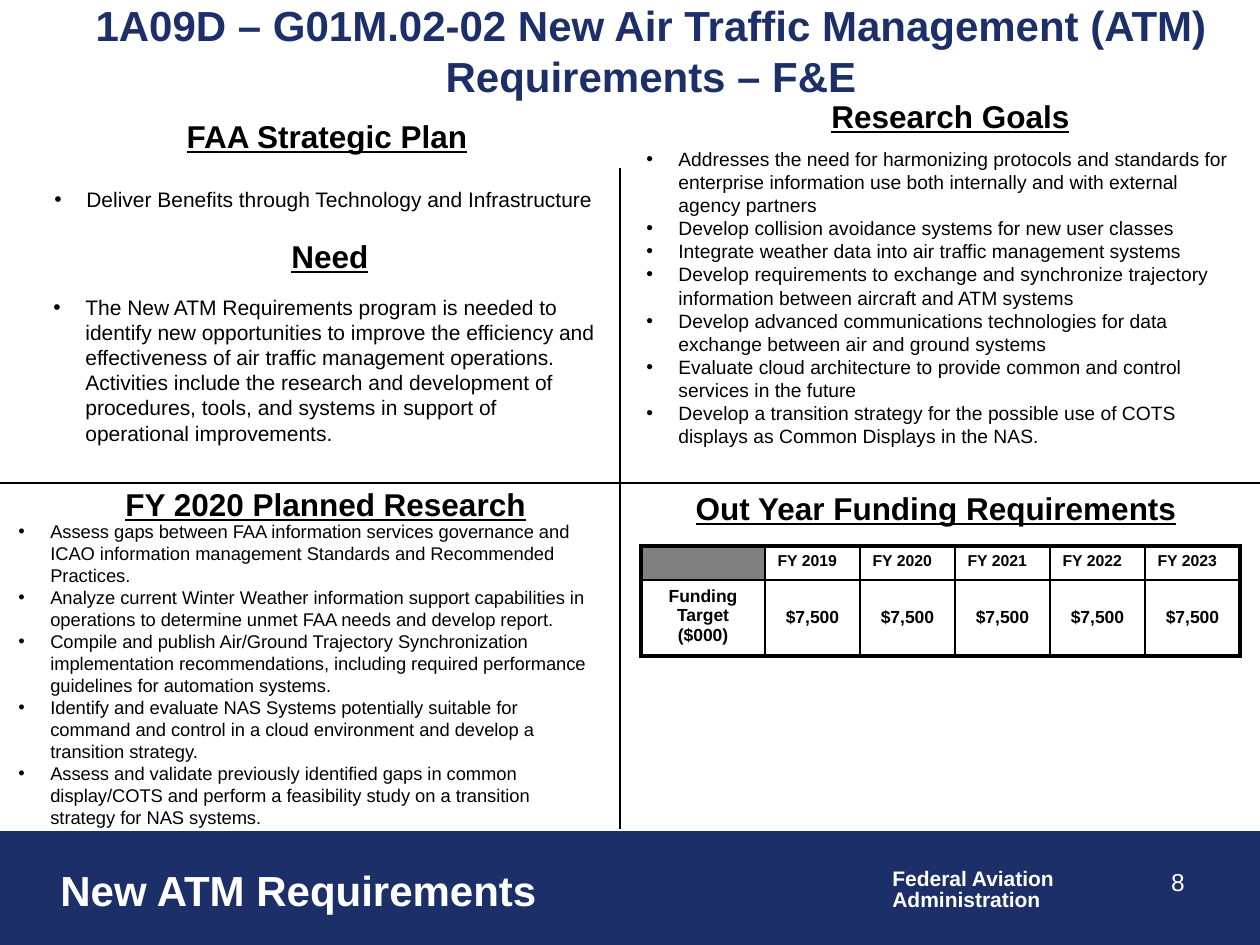
from dataclasses import dataclass

import pptx
import pptx.dml.color
import pptx.enum.shapes
import pptx.enum.text
import pptx.oxml.ns
import pptx.util
from lxml import etree

PIXELS_PER_INCH = 126
FONT = "Arial"
NAVY, BLACK, WHITE, GRAY = "1D2F68", "000000", "FFFFFF", "808080"
ALIGN = pptx.enum.text.PP_ALIGN
ANCHOR = pptx.enum.text.MSO_ANCHOR
INDENT = 32


@dataclass
class Box:
    left: int
    top: int
    width: int
    height: int


@dataclass
class Style:
    size: float
    color: str = BLACK
    bold: bool = False
    underline: bool = False
    align: ALIGN = ALIGN.LEFT
    spacing: float = 1.0


@dataclass
class Label:
    box: Box
    lines: list[str]
    style: Style
    bulleted: bool = False
    anchor: ANCHOR = ANCHOR.TOP
    wrap: bool = True


HEADING = Style(18, bold=True, underline=True, align=ALIGN.CENTER)
HEADING_LEFT = Style(18, bold=True, underline=True)
FUNDING_HEADING = Label(Box(662, 483, 557, 68), ["Out Year Funding Requirements"], HEADING)

LABELS = [
    Label(Box(880, 863, 189, 55), ["Federal Aviation", "Administration"],
          Style(12, WHITE, bold=True, spacing=0.85), wrap=False),
    Label(Box(48, 858, 539, 66), ["New ATM Requirements"], Style(24, WHITE, bold=True)),
    Label(Box(903, 861, 294, 66), ["8"], Style(14, WHITE, align=ALIGN.RIGHT)),
    Label(Box(67, 8, 1168, 84),
          ["1A09D – G01M.02-02 New Air Traffic Management (ATM) Requirements – F&E"],
          Style(24, NAVY, bold=True, align=ALIGN.CENTER), anchor=ANCHOR.MIDDLE),
    Label(Box(113, 479, 525, 48), ["FY 2020 Planned Research"], HEADING_LEFT),
    Label(Box(683, 91, 535, 42), ["Research Goals"], HEADING),
    Label(Box(86, 111, 482, 42), ["FAA Strategic Plan"], HEADING),
    Label(Box(89, 231, 482, 42), ["Need"], HEADING),
    Label(Box(6, 514, 602, 324), [
        "Assess gaps between FAA information services governance and ICAO information "
        "management Standards and Recommended Practices.",
        "Analyze current Winter Weather information support capabilities in operations to "
        "determine unmet FAA needs and develop report.",
        "Compile and publish Air/Ground Trajectory Synchronization implementation "
        "recommendations, including required performance guidelines for automation systems.",
        "Identify and evaluate NAS Systems potentially suitable for command and control in a "
        "cloud environment and develop a transition strategy.",
        "Assess and validate previously identified gaps in common display/COTS and perform a "
        "feasibility study on a transition strategy for NAS systems.",
    ], Style(10.5), bulleted=True),
    Label(Box(42, 180, 578, 38), ["Deliver Benefits through Technology and Infrastructure"],
          Style(12), bulleted=True),
    Label(Box(634, 141, 608, 316), [
        "Addresses the need for harmonizing protocols and standards for enterprise information "
        "use both internally and with external agency partners",
        "Develop collision avoidance systems for new user classes",
        "Integrate weather data into air traffic management systems",
        "Develop requirements to exchange and synchronize trajectory information between "
        "aircraft and ATM systems",
        "Develop advanced communications technologies for data exchange between air and "
        "ground systems",
        "Evaluate cloud architecture to provide common and control services in the future",
        "Develop a transition strategy for the possible use of COTS displays as Common "
        "Displays in the NAS.",
    ], Style(11), bulleted=True),
    Label(Box(41, 288, 578, 165), [
        "The New ATM Requirements program is needed to identify new opportunities to improve "
        "the efficiency and effectiveness of air traffic management operations. Activities "
        "include the research and development of procedures, tools, and systems in support of "
        "operational improvements.",
    ], Style(12), bulleted=True),
]

FUNDING_ROWS = [
    [""] + [f"FY {year}" for year in range(2019, 2024)],
    ["Funding Target ($000)"] + ["$7,500"] * 5,
]


def px(length: int) -> pptx.util.Emu:
    return pptx.util.Emu(round(length * 914400 / PIXELS_PER_INCH))


def place(box: Box) -> tuple[pptx.util.Emu, ...]:
    return px(box.left), px(box.top), px(box.width), px(box.height)


def rgb(color: str) -> pptx.dml.color.RGBColor:
    return pptx.dml.color.RGBColor.from_string(color)


def add_run(paragraph, text: str, style: Style) -> None:
    run = paragraph.add_run()
    run.text = text
    run.font.name = FONT
    run.font.size = pptx.util.Pt(style.size)
    run.font.bold = style.bold
    run.font.underline = style.underline
    run.font.color.rgb = rgb(style.color)


def add_bullet(paragraph) -> None:
    properties = paragraph._p.get_or_add_pPr()
    properties.set("marL", str(px(INDENT)))
    properties.set("indent", str(-px(INDENT)))
    etree.SubElement(properties, pptx.oxml.ns.qn("a:buFont"), typeface=FONT)
    etree.SubElement(properties, pptx.oxml.ns.qn("a:buChar"), char="•")


def add_label(slide, label: Label):
    frame = slide.shapes.add_textbox(*place(label.box)).text_frame
    frame.word_wrap = label.wrap
    frame.vertical_anchor = label.anchor
    for index, line in enumerate(label.lines):
        paragraph = frame.add_paragraph() if index else frame.paragraphs[0]
        if label.bulleted:
            add_bullet(paragraph)
        paragraph.alignment = label.style.align
        paragraph.line_spacing = label.style.spacing
        add_run(paragraph, line, label.style)
    return frame


def add_divider(slide, left: int, top: int, right: int, bottom: int) -> None:
    connector = slide.shapes.add_connector(
        pptx.enum.shapes.MSO_CONNECTOR.STRAIGHT, px(left), px(top), px(right), px(bottom))
    connector.line.color.rgb = rgb(BLACK)
    connector.line.width = pptx.util.Pt(0.75)
    etree.SubElement(connector._element.spPr, pptx.oxml.ns.qn("a:effectLst"))


def add_border(cell, side: str, points: float) -> None:
    line = etree.SubElement(cell._tc.get_or_add_tcPr(), pptx.oxml.ns.qn(f"a:ln{side}"),
                            w=str(pptx.util.Pt(points)))
    fill = etree.SubElement(line, pptx.oxml.ns.qn("a:solidFill"))
    etree.SubElement(fill, pptx.oxml.ns.qn("a:srgbClr"), val=BLACK)


def add_funding_table(slide, box: Box, widths: list[int], heights: list[int]) -> None:
    table = slide.shapes.add_table(len(heights), len(widths), *place(box)).table
    table.first_row = table.horz_banding = False
    for column, width in zip(table.columns, widths):
        column.width = px(width)
    for row, height in zip(table.rows, heights):
        row.height = px(height)
    last_row, last_column = len(heights) - 1, len(widths) - 1
    for row, values in enumerate(FUNDING_ROWS):
        for column, text in enumerate(values):
            cell = table.cell(row, column)
            outer = {"L": column == 0, "R": column == last_column,
                     "T": row == 0, "B": row == last_row}
            for side, is_outer in outer.items():
                add_border(cell, side, 2.25 if is_outer else 1)
            paragraph = cell.text_frame.paragraphs[0]
            if not text:
                cell.fill.solid()
                cell.fill.fore_color.rgb = rgb(GRAY)
                paragraph._p.get_or_add_endParaRPr().set("sz", "900")
                continue
            cell.fill.background()
            if row:
                paragraph.alignment = ALIGN.CENTER
                cell.vertical_anchor = ANCHOR.MIDDLE if column else ANCHOR.TOP
            add_run(paragraph, text, Style(10 if row else 9, bold=True))


def main() -> None:
    presentation = pptx.Presentation()
    presentation.slide_width, presentation.slide_height = px(1260), px(945)
    slide = presentation.slides.add_slide(presentation.slide_layouts[6])
    footer = slide.shapes.add_shape(
        pptx.enum.shapes.MSO_SHAPE.RECTANGLE, *place(Box(0, 832, 1260, 112)))
    footer.shadow.inherit = False
    footer.fill.solid()
    footer.fill.fore_color.rgb = rgb(NAVY)
    footer.line.color.rgb = rgb(NAVY)
    footer.line.width = pptx.util.Pt(0.75)
    add_divider(slide, 620, 168, 620, 829)
    add_divider(slide, 0, 483, 1260, 483)
    for label in LABELS:
        add_label(slide, label)
    funding_frame = add_label(slide, FUNDING_HEADING)
    add_run(funding_frame.paragraphs[0], " ", Style(18))
    add_funding_table(slide, Box(641, 546, 599, 110), [124] + [95] * 5, [34, 76])
    presentation.save("out.pptx")


if __name__ == "__main__":
    main()
